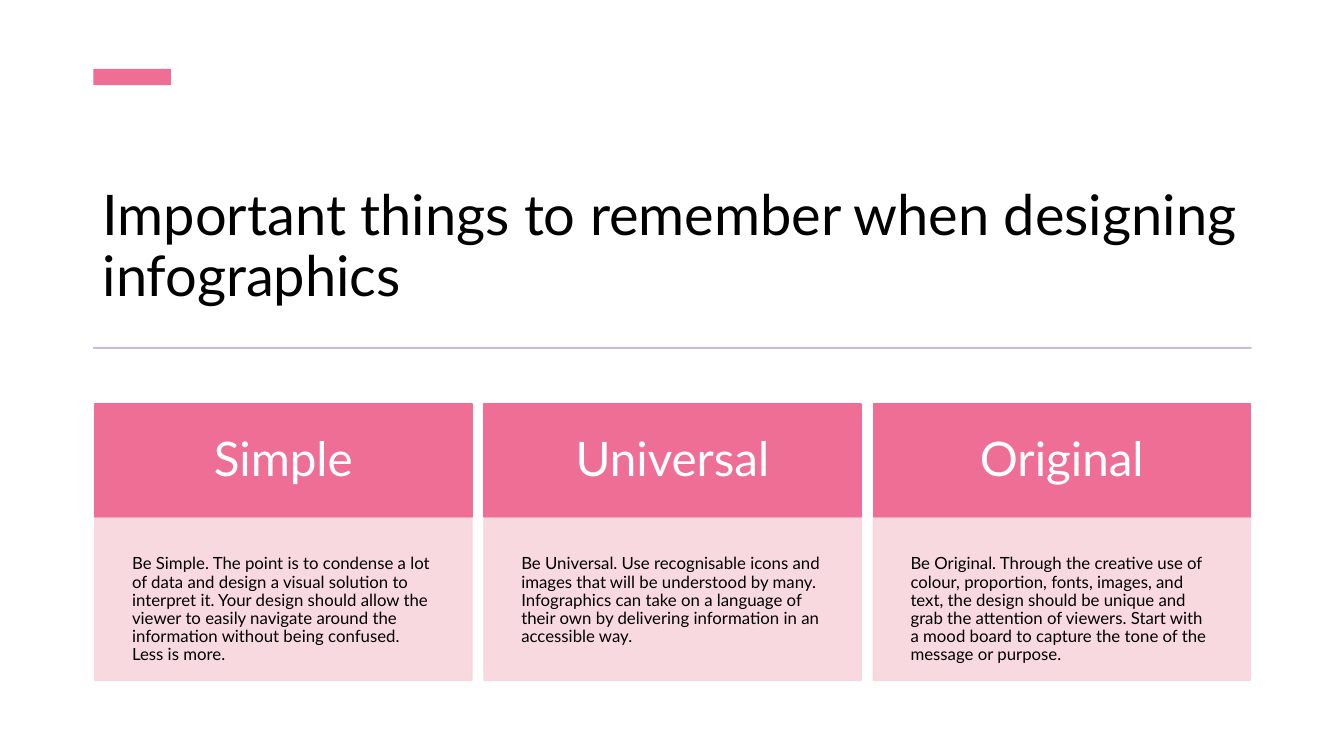
from lxml.etree import SubElement
from pptx import Presentation
from pptx.dml.color import RGBColor
from pptx.enum.shapes import MSO_SHAPE
from pptx.enum.text import MSO_ANCHOR, PP_ALIGN
from pptx.oxml.ns import qn
from pptx.util import Inches, Pt

PINK, BLUSH, LILAC = "EE6E96", "F8D5DD", "CABDDB"
BLACK, WHITE = "000000", "FFFFFF"
LEFT, CARD_WIDTH, PITCH = 7.05, 28.06, 28.96
HEADING_TOP, HEADING_HEIGHT = 53.47, 14.93
ADVICE_TOP, ADVICE_HEIGHT = 68.53, 21.47

PRINCIPLES = [
    ("Simple", "Be Simple. The point is to condense a lot of data and design a visual "
     "solution to interpret it. Your design should allow the viewer to easily navigate "
     "around the information without being confused. Less is more."),
    ("Universal", "Be Universal. Use recognisable icons and images that will be understood "
     "by many. Infographics can take on a language of their own by delivering information "
     "in an accessible way."),
    ("Original", "Be Original. Through the creative use of colour, proportion, fonts, images, "
     "and text, the design should be unique and grab the attention of viewers. Start with "
     "a mood board to capture the tone of the message or purpose."),
]


def colour(code):
    """Turn a hex string into a colour."""
    return RGBColor.from_string(code)


class Deck:
    """Draw styled elements, placed in percent of the slide's size."""

    font = "Lato"
    line_spacing = 0.9

    def __init__(self):
        """Open a widescreen presentation with one blank slide."""
        self.show = Presentation()
        self.show.slide_width, self.show.slide_height = Inches(13.33), Inches(7.5)
        self.slide = self.show.slides.add_slide(self.show.slide_layouts[6])
        self.slide.background.fill.solid()
        self.slide.background.fill.fore_color.rgb = colour(WHITE)

    def box(self, left, top, width, height):
        """Convert percentages to lengths."""
        across, down = self.show.slide_width / 100, self.show.slide_height / 100
        return int(left * across), int(top * down), int(width * across), int(height * down)

    def block(self, place, fill, outlined=False, opacity=100):
        """Add a filled rectangle."""
        block = self.slide.shapes.add_shape(MSO_SHAPE.RECTANGLE, *self.box(*place))
        block.shadow.inherit = False
        paints = [block.fill]
        if outlined:
            block.line.width = Pt(1)
            paints.append(block.line.fill)
        else:
            block.line.fill.background()
        for paint in paints:
            paint.solid()
            paint.fore_color.rgb = colour(fill)
        if opacity < 100:
            for tint in block._element.spPr.iter(qn("a:srgbClr")):
                SubElement(tint, qn("a:alpha")).set("val", str(opacity * 1000))
        return block

    def set_text(self, holder, words, size, ink, anchor, align=PP_ALIGN.LEFT, inset=None):
        """Set the text of a shape."""
        frame = holder.text_frame
        frame.word_wrap = True
        frame.vertical_anchor = anchor
        if inset is not None:
            frame.margin_left = frame.margin_right = Inches(inset)
            frame.margin_top = frame.margin_bottom = Inches(inset)
        paragraph = frame.paragraphs[0]
        paragraph.alignment = align
        paragraph.line_spacing = self.line_spacing
        run = paragraph.add_run()
        run.text = words
        run.font.name, run.font.size = self.font, Pt(size)
        run.font.color.rgb = colour(ink)

    def title(self, place, words):
        """Add the slide's title."""
        title = self.slide.shapes.add_textbox(*self.box(*place))
        self.set_text(title, words, 40, BLACK, MSO_ANCHOR.BOTTOM)

    def card(self, column, name, advice):
        """Add a heading with its advice below."""
        left = LEFT + column * PITCH
        heading = self.block((left, HEADING_TOP, CARD_WIDTH, HEADING_HEIGHT), PINK, True)
        self.set_text(heading, name, 34, WHITE, MSO_ANCHOR.MIDDLE, PP_ALIGN.CENTER, 0.3)
        body = self.block((left, ADVICE_TOP, CARD_WIDTH, ADVICE_HEIGHT), BLUSH, True, 90)
        self.set_text(body, advice, 12, BLACK, MSO_ANCHOR.TOP, inset=0.37)


def main():
    """Build and save the slide."""
    deck = Deck()
    deck.title((6.9, 21.73, 86.2, 19.73),
               "Important things to remember when designing infographics")
    deck.block((6.94, 9.13, 5.78, 2.13), PINK)
    deck.block((6.94, 45.87, 86.2, 0.27), LILAC)
    for column, (name, advice) in enumerate(PRINCIPLES):
        deck.card(column, name, advice)
    deck.show.save("out.pptx")


if __name__ == "__main__":
    main()
